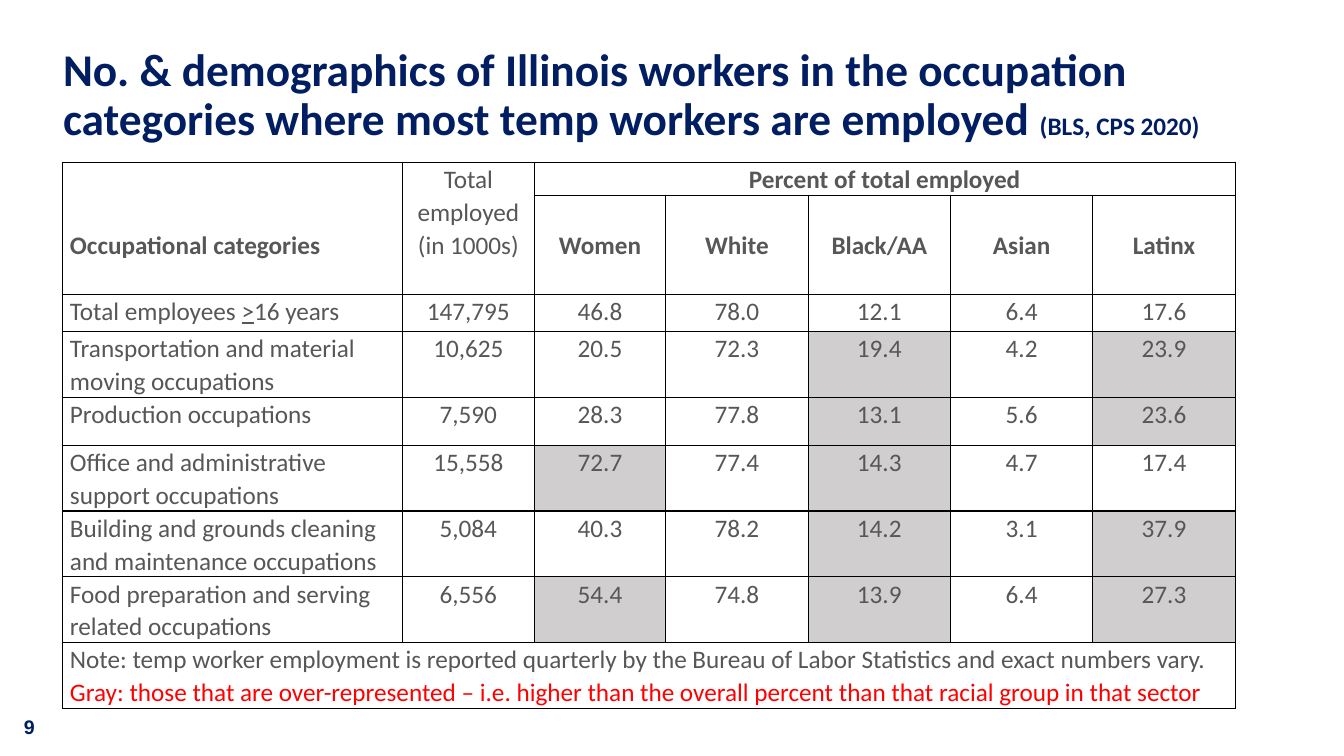
from lxml.etree import SubElement
from pptx import Presentation
from pptx.dml.color import RGBColor
from pptx.enum.text import MSO_ANCHOR as Anchor, MSO_AUTO_SIZE as AutoSize, PP_ALIGN as Align
from pptx.oxml import parse_xml
from pptx.oxml.ns import nsdecls, qn
from pptx.util import Pt

COLORS = {
    "navy": "001E61",
    "text": "575757",
    "red": "FF0000",
    "gray": "D0CECE",
    "white": "FFFFFF",
    "black": "000000",
}
GROUPS = ["Women", "White", "Black/AA", "Asian", "Latinx"]
COMPARED_GROUPS = {"Women", "Black/AA", "Asian", "Latinx"}
OVERALL = [46.8, 78.0, 12.1, 6.4, 17.6]
OCCUPATIONS = [
    ("Total employees >16 years", 147795, OVERALL),
    ("Transportation and material moving occupations", 10625, [20.5, 72.3, 19.4, 4.2, 23.9]),
    ("Production occupations", 7590, [28.3, 77.8, 13.1, 5.6, 23.6]),
    ("Office and administrative support occupations", 15558, [72.7, 77.4, 14.3, 4.7, 17.4]),
    ("Building and grounds cleaning and maintenance occupations", 5084, [40.3, 78.2, 14.2, 3.1, 37.9]),
    ("Food preparation and serving related occupations", 6556, [54.4, 74.8, 13.9, 6.4, 27.3]),
]
NOTE = (
    "Note: temp worker employment is reported quarterly by the Bureau of Labor Statistics and exact numbers vary.\n"
    "Gray: those that are over-represented – i.e. higher than the overall percent than that racial group in that sector"
)
COLUMN_WIDTHS = [243, 94, 94] + [101.7] * 4
ROW_HEIGHTS = [23.6, 70.6, 26.6, 47, 34.4, 47, 47, 47, 47]


def color(name):
    return RGBColor.from_string(COLORS[name])


def format_font(font, size, color_name, bold=False, name="Calibri"):
    font.name = name
    font.size = Pt(size)
    font.bold = bold
    font.color.rgb = color(color_name)


def add_title(slide, left, top, width, height):
    title = slide.shapes.title
    title.left, title.top, title.width, title.height = Pt(left), Pt(top), Pt(width), Pt(height)
    frame = title.text_frame
    frame.margin_left = frame.margin_right = frame.margin_top = frame.margin_bottom = 0
    frame.vertical_anchor = Anchor.TOP
    frame.auto_size = AutoSize.NONE
    paragraph = frame.paragraphs[0]
    paragraph.alignment = Align.LEFT
    paragraph.line_spacing = 0.9
    heading = "No. & demographics of Illinois workers in the occupation categories where most temp workers are employed "
    for text, size in [(heading, 32.4), ("(BLS, CPS 2020)", 18)]:
        run = paragraph.add_run()
        run.text = text
        format_font(run.font, size, "navy", bold=True)


def set_borders(cell):
    properties = cell._tc.get_or_add_tcPr()
    for position, side in enumerate(["lnL", "lnR", "lnT", "lnB"]):
        border = parse_xml(f'<a:{side} {nsdecls("a")} w="{Pt(1)}"/>')
        fill = SubElement(border, qn("a:solidFill"))
        SubElement(fill, qn("a:srgbClr"), val=COLORS["black"])
        properties.insert(position, border)


def prepare_cell(cell):
    cell.margin_left = cell.margin_right = Pt(5.4)
    cell.margin_top = cell.margin_bottom = 0
    cell.fill.solid()
    cell.fill.fore_color.rgb = color("white")
    set_borders(cell)


def fill_cell(cell, text, alignment=Align.CENTER, bold=False):
    cell.text_frame.text = text
    for paragraph in cell.text_frame.paragraphs:
        paragraph.alignment = alignment
        paragraph.line_spacing = 1.07
        for run in paragraph.runs:
            format_font(run.font, 18, "text", bold)


def add_header(table):
    table.cell(0, 0).merge(table.cell(1, 0))
    table.cell(0, 1).merge(table.cell(1, 1))
    table.cell(0, 2).merge(table.cell(0, 6))
    fill_cell(table.cell(0, 0), "Occupational categories", Align.LEFT, bold=True)
    table.cell(0, 0).margin_top = Pt(47)
    fill_cell(table.cell(0, 1), "Total\nemployed\n(in 1000s)")
    fill_cell(table.cell(0, 2), "Percent of total employed", bold=True)
    for column, group in enumerate(GROUPS, 2):
        cell = table.cell(1, column)
        fill_cell(cell, group, bold=True)
        cell.vertical_anchor = Anchor.MIDDLE


def add_occupations(table):
    for row, (occupation, total, percents) in enumerate(OCCUPATIONS, 2):
        fill_cell(table.cell(row, 0), occupation, Align.LEFT)
        fill_cell(table.cell(row, 1), f"{total:,}")
        for column, (group, percent, overall) in enumerate(zip(GROUPS, percents, OVERALL), 2):
            cell = table.cell(row, column)
            fill_cell(cell, f"{percent:.1f}")
            if group in COMPARED_GROUPS and percent > overall:
                cell.fill.fore_color.rgb = color("gray")
    underline_sign(table.cell(2, 0).text_frame.paragraphs[0])


def underline_sign(paragraph):
    before, sign, after = paragraph.text.partition(">")
    paragraph.runs[0].text = before
    for text in (sign, after):
        run = paragraph.add_run()
        run.text = text
        format_font(run.font, 18, "text")
        run.font.underline = text == sign


def add_note(table):
    last = len(ROW_HEIGHTS) - 1
    table.cell(last, 0).merge(table.cell(last, 6))
    fill_cell(table.cell(last, 0), NOTE, Align.LEFT)
    legend = table.cell(last, 0).text_frame.paragraphs[1]
    legend.runs[0].font.color.rgb = color("red")


def add_demographics_table(slide, left, top):
    frame = slide.shapes.add_table(
        len(ROW_HEIGHTS), len(COLUMN_WIDTHS), Pt(left), Pt(top), Pt(sum(COLUMN_WIDTHS)), Pt(sum(ROW_HEIGHTS))
    )
    table = frame.table
    table.first_row = table.horz_banding = False
    for column, width in zip(table.columns, COLUMN_WIDTHS):
        column.width = Pt(width)
    for row, height in zip(table.rows, ROW_HEIGHTS):
        row.height = Pt(height)
        for cell in row.cells:
            prepare_cell(cell)
    add_header(table)
    add_occupations(table)
    add_note(table)


def add_page_number(slide, left, top, width, height):
    box = slide.shapes.add_textbox(Pt(left), Pt(top), Pt(width), Pt(height))
    frame = box.text_frame
    frame.word_wrap = True
    frame.vertical_anchor = Anchor.MIDDLE
    frame.text = "9"
    format_font(frame.paragraphs[0].runs[0].font, 14, "navy", bold=True, name="Arial")


def main():
    presentation = Presentation()
    presentation.slide_width, presentation.slide_height = Pt(960), Pt(540)
    slide = presentation.slides.add_slide(presentation.slide_layouts[5])
    add_page_number(slide, 10, 507, 47.5, 24.5)
    add_title(slide, 45, 34, 870, 64)
    add_demographics_table(slide, 44.6, 115.9)
    presentation.save("out.pptx")


if __name__ == "__main__":
    main()
